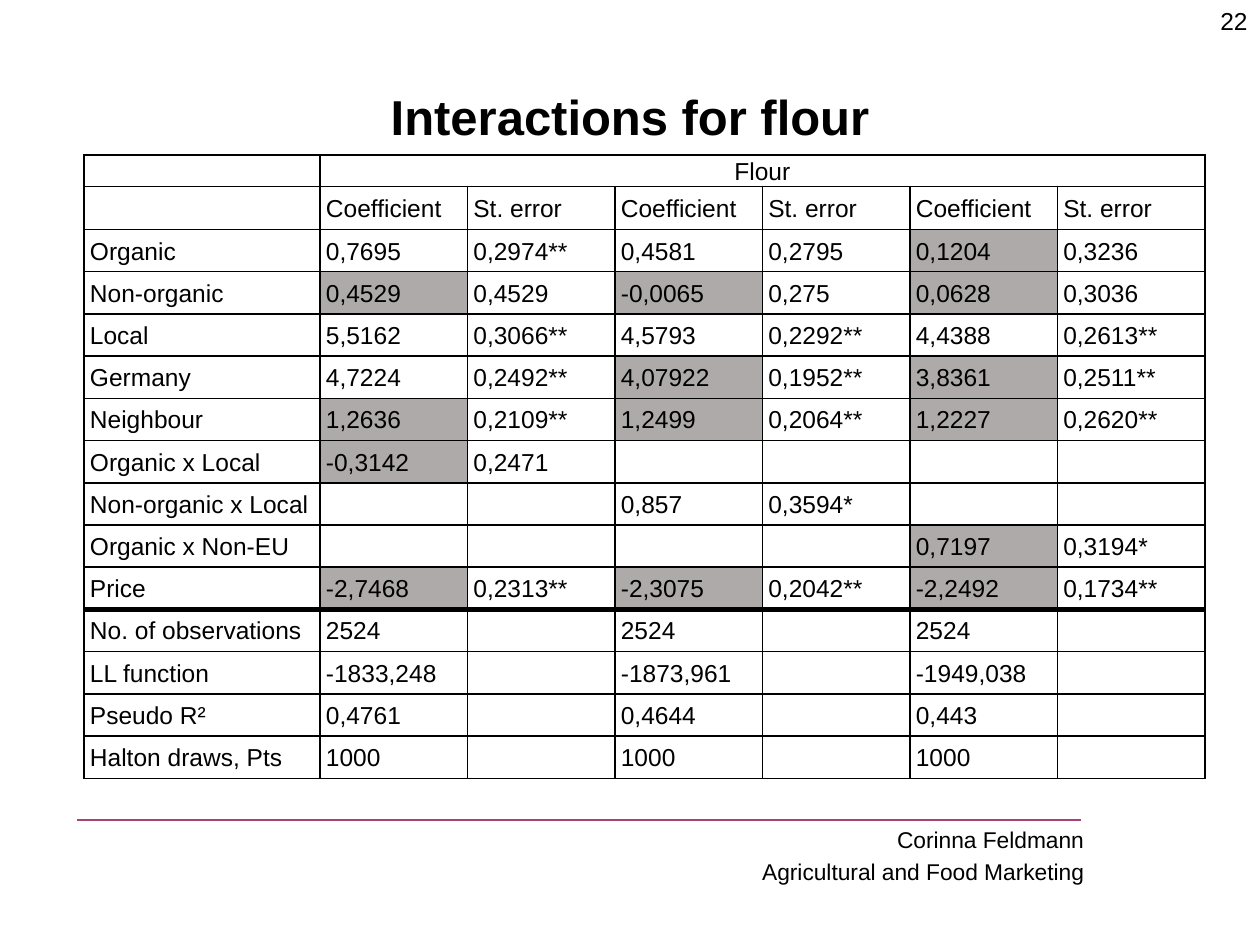
from dataclasses import dataclass

from lxml import etree
from pptx import Presentation
from pptx.dml.color import RGBColor
from pptx.enum.shapes import MSO_CONNECTOR
from pptx.enum.text import MSO_ANCHOR, PP_ALIGN
from pptx.oxml.ns import qn
from pptx.util import Pt

LEFT, CENTER, RIGHT = PP_ALIGN.LEFT, PP_ALIGN.CENTER, PP_ALIGN.RIGHT
MIDDLE = MSO_ANCHOR.MIDDLE
STRAIGHT = MSO_CONNECTOR.STRAIGHT
EMU_PER_PX = 914400 / 126


@dataclass(frozen=True)
class Theme:
    font: str = "Arial"
    ink: RGBColor = RGBColor(0x00, 0x00, 0x00)
    shade: RGBColor = RGBColor(0xAE, 0xAA, 0xAA)
    rule: RGBColor = RGBColor(0xA4, 0x42, 0x7A)
    title_size: int = 28
    body_size: int = 14
    footer_size: int = 13


THEME = Theme()


def px(length):
    return round(length * EMU_PER_PX)


def write(paragraph, text, size, align, bold=False):
    paragraph.text = text
    paragraph.alignment = align
    paragraph.font.name = THEME.font
    paragraph.font.size = Pt(size)
    paragraph.font.bold = bold
    paragraph.font.color.rgb = THEME.ink


# Columns are separated by "|"; a leading "#" marks a shaded cell
RESULTS = [
    "|Flour|||||",
    "|Coefficient|St. error|Coefficient|St. error|Coefficient|St. error",
    "Organic|0,7695|0,2974**|0,4581|0,2795|#0,1204|0,3236",
    "Non-organic|#0,4529|0,4529|#-0,0065|0,275|#0,0628|0,3036",
    "Local|5,5162|0,3066**|4,5793|0,2292**|4,4388|0,2613**",
    "Germany|4,7224|0,2492**|#4,07922|0,1952**|#3,8361|0,2511**",
    "Neighbour|#1,2636|0,2109**|#1,2499|0,2064**|#1,2227|0,2620**",
    "Organic x Local|#-0,3142|0,2471||||",
    "Non-organic x Local|||0,857|0,3594*||",
    "Organic x Non-EU|||||#0,7197|0,3194*",
    "Price|#-2,7468|0,2313**|#-2,3075|0,2042**|#-2,2492|0,1734**",
    "No. of observations|2524||2524||2524|",
    "LL function|-1833,248||-1873,961||-1949,038|",
    "Pseudo R²|0,4761||0,4644||0,443|",
    "Halton draws, Pts|1000||1000||1000|",
]
PRICE_ROW = 10

presentation = Presentation()
presentation.slide_width, presentation.slide_height = px(1260), px(945)
slide = presentation.slides.add_slide(presentation.slide_layouts[5])

# Footer rule
footer_rule = slide.shapes.add_connector(STRAIGHT, px(1081), px(820), px(77), px(820))
footer_rule.line.color.rgb = THEME.rule
footer_rule.line.width = Pt(0.75)
etree.SubElement(footer_rule._element.spPr, qn("a:effectLst"))

# Footer text
footer = slide.shapes.add_textbox(px(571), px(820), px(525), px(73)).text_frame
footer.word_wrap = True
write(footer.paragraphs[0], "Corinna Feldmann", THEME.footer_size, RIGHT)
department = footer.add_paragraph()
write(department, "Agricultural and Food Marketing", THEME.footer_size, RIGHT)
department.space_before = Pt(2.6)

# Title
title = slide.shapes.title
title.left, title.top, title.width, title.height = px(63), px(37), px(1134), px(157)
title.text_frame.vertical_anchor = MIDDLE
write(title.text_frame.paragraphs[0], "Interactions for flour", THEME.title_size, CENTER, True)

# Results table: one label column and six equal value columns
table = slide.shapes.add_table(len(RESULTS), 7, px(84), px(155), px(1121), px(622)).table
table.first_row = table.horz_banding = False
table.columns[0].width = px(236)
for column in range(1, 7):
    table.columns[column].width = px(885) // 6
table.rows[0].height = px(30)
table.rows[1].height = px(43)
for row in range(2, len(RESULTS)):
    table.rows[row].height = px(549) // 13

for row, line in enumerate(RESULTS):
    for column, entry in enumerate(line.split("|")):
        cell = table.cell(row, column)
        cell.margin_left = cell.margin_right = px(6)
        cell.margin_top = cell.margin_bottom = 0
        cell.vertical_anchor = MIDDLE
        paragraph = cell.text_frame.paragraphs[0]
        write(paragraph, entry.lstrip("#"), THEME.body_size, LEFT if row else CENTER)
        paragraph.line_spacing = 1.07

        # Borders, with a heavy line below the price row
        properties = cell._tc.get_or_add_tcPr()
        for side in "LRTB":
            heavy = (row, side) in [(PRICE_ROW, "B"), (PRICE_ROW + 1, "T")]
            border = etree.SubElement(properties, qn(f"a:ln{side}"), w=str(Pt(3 if heavy else 1)))
            border_fill = etree.SubElement(border, qn("a:solidFill"))
            etree.SubElement(border_fill, qn("a:srgbClr"), val=str(THEME.ink))

        if entry.startswith("#"):
            cell.fill.solid()
            cell.fill.fore_color.rgb = THEME.shade
        else:
            cell.fill.background()
table.cell(0, 1).merge(table.cell(0, 6))

# Page number
page_number = slide.shapes.add_textbox(px(1196), 0, px(64), px(66)).text_frame
page_number.word_wrap = True
write(page_number.paragraphs[0], "22", THEME.body_size, RIGHT)

presentation.save("out.pptx")
